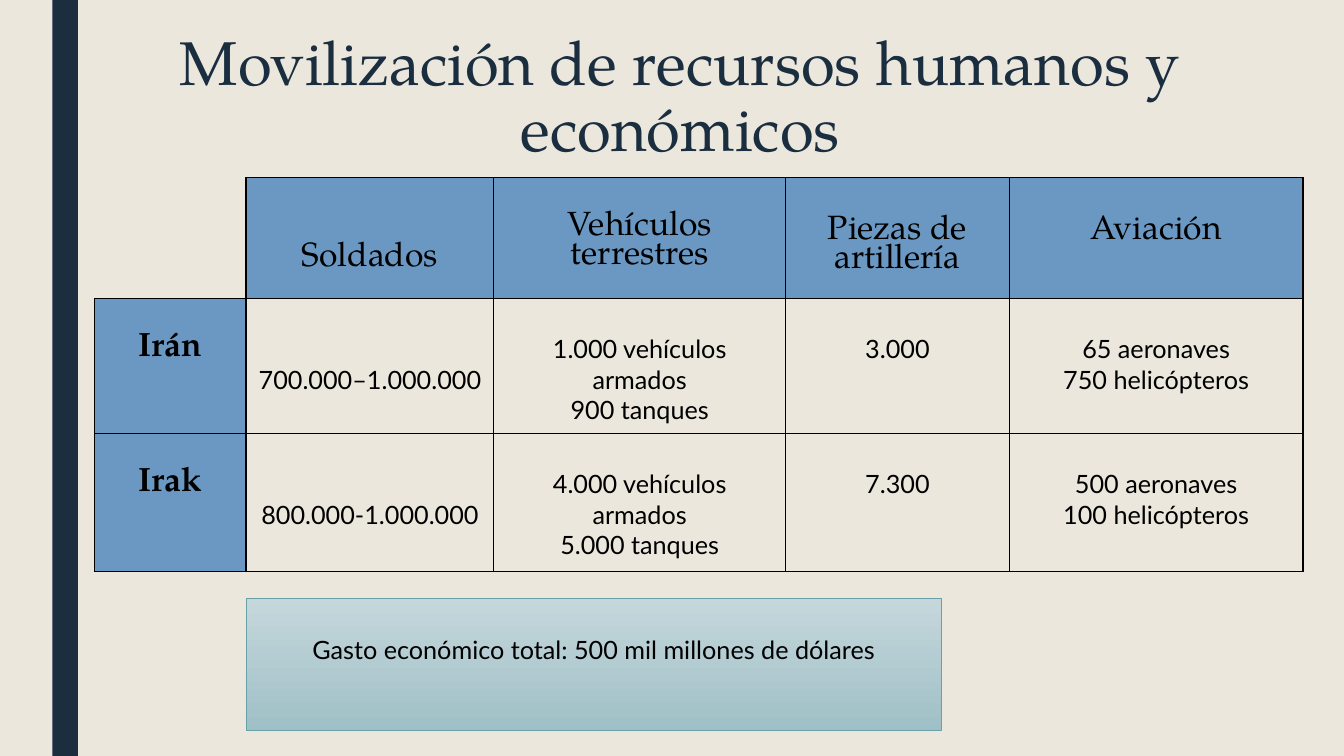
from lxml import etree
from pptx import Presentation
from pptx.dml.color import RGBColor
from pptx.enum.shapes import MSO_SHAPE
from pptx.enum.text import MSO_ANCHOR, PP_ALIGN
from pptx.oxml.ns import qn
from pptx.util import Inches, Pt

RECT = MSO_SHAPE.RECTANGLE
TOP = MSO_ANCHOR.TOP
CENTER = PP_ALIGN.CENTER
COLORS = {"bg": "EBE7DD", "navy": "1A2E40", "blue": "6A98C2", "black": "000000",
          "teal_light": "C5D7DB", "teal": "9FC0C7", "teal_line": "69A1AB"}
SERIF, SANS = "TeX Gyre Pagella", "Lato"
COLUMNS = [11.25, 18.45, 21.7, 16.65, 21.85]
ROWS = [16, 17.87, 18.27]
HEADERS = [("Soldados", 0.65), ("Vehículos terrestres", 0.35),
           ("Piezas de artillería", 0.39), ("Aviación", 0.39)]
COUNTRIES = {
    "Irán": [["700.000–1.000.000"], ["1.000 vehículos armados", "900 tanques"],
             ["3.000"], ["65 aeronaves", "750 helicópteros"]],
    "Irak": [["800.000-1.000.000"], ["4.000 vehículos armados", "5.000 tanques"],
             ["7.300"], ["500 aeronaves", "100 helicópteros"]],
}


class Deck:
    """Slide style and builders; positions are percentages of the slide."""

    def __init__(self):
        self.prs = Presentation()
        self.prs.slide_width, self.prs.slide_height = Inches(13.33), Inches(7.5)
        self.s = self.prs.slides.add_slide(self.prs.slide_layouts[6])
        self.paint(self.s.background.fill, "bg")

    def box(self, x, y, w, h):
        sw, sh = self.prs.slide_width, self.prs.slide_height
        return [int(v * full / 100) for v, full in ((x, sw), (y, sh), (w, sw), (h, sh))]

    def paint(self, fill, color):
        fill.solid()
        fill.fore_color.rgb = RGBColor.from_string(COLORS[color])

    def add_lines(self, tf, lines, size, font, color="black", bold=False, spacing=1.0):
        for i, line in enumerate(lines):
            p = tf.paragraphs[0] if i == 0 else tf.add_paragraph()
            p.alignment, p.line_spacing = CENTER, spacing
            r = p.add_run()
            r.text = line
            r.font.size, r.font.name, r.font.bold = Pt(size), font, bold
            r.font.color.rgb = RGBColor.from_string(COLORS[color])

    def text(self, pos, lines, *style, **more):
        tf = self.s.shapes.add_textbox(*self.box(*pos)).text_frame
        tf.word_wrap, tf.vertical_anchor = True, TOP
        self.add_lines(tf, lines, *style, **more)

    def rect(self, pos, color):
        sp = self.s.shapes.add_shape(RECT, *self.box(*pos))
        sp.shadow.inherit = False
        self.paint(sp.fill, color)
        sp.line.fill.background()
        return sp

    def panel(self, pos, lines):
        sp = self.rect(pos, "teal")
        sp.fill.gradient()
        sp.fill.gradient_angle = 270
        for i, (stop, color) in enumerate(zip(sp.fill.gradient_stops, ("teal_light", "teal"))):
            stop.position = i
            stop.color.rgb = RGBColor.from_string(COLORS[color])
        self.paint(sp.line.fill, "teal_line")
        sp.line.width = Pt(0.5)
        tf = sp.text_frame
        tf.word_wrap, tf.vertical_anchor, tf.margin_top = True, TOP, Inches(0.35)
        self.add_lines(tf, lines, 18, SANS)

    def borders(self, cell, sides):
        tc_pr = cell._tc.get_or_add_tcPr()
        for i, side in enumerate(("L", "R", "T", "B")):
            ln = etree.Element(qn(f"a:ln{side}"), w=str(Pt(1)))
            if side in sides:
                fill = etree.SubElement(ln, qn("a:solidFill"))
                etree.SubElement(fill, qn("a:srgbClr"), val=COLORS["black"])
            else:
                etree.SubElement(ln, qn("a:noFill"))
            tc_pr.insert(i, ln)

    def cell(self, cell, lines, top, size, font, fill=None, sides="LRTB", **more):
        cell.margin_top, cell.vertical_anchor = Inches(top), TOP
        if fill:
            self.paint(cell.fill, fill)
        else:
            cell.fill.background()
        self.borders(cell, sides)
        self.add_lines(cell.text_frame, lines, size, font, **more)

    def table(self, x, y):
        pos = self.box(x, y, sum(COLUMNS), sum(ROWS))
        table = self.s.shapes.add_table(len(ROWS), len(COLUMNS), *pos).table
        table.first_row = table.horz_banding = False
        for column, share in zip(table.columns, COLUMNS):
            column.width = self.box(0, 0, share, 0)[2]
        for row, share in zip(table.rows, ROWS):
            row.height = self.box(0, 0, 0, share)[3]
        self.cell(table.cell(0, 0), [], 0.05, 18, SANS, sides="RB")
        for c, (label, top) in enumerate(HEADERS, 1):
            self.cell(table.cell(0, c), [label], top, 24, SERIF, "blue", spacing=0.85)
        for r, (country, values) in enumerate(COUNTRIES.items(), 1):
            self.cell(table.cell(r, 0), [country], 0.35, 24, SERIF, "blue",
                      bold=True, spacing=0.85)
            for c, lines in enumerate(values, 1):
                self.cell(table.cell(r, c), lines, 0.65 if c == 1 else 0.35, 18, SANS)


def main():
    deck = Deck()
    deck.rect((3.9, 0, 1.9, 100), "navy")
    deck.text((11.25, 3.73, 78.75, 21.6), ["Movilización de recursos humanos y económicos"],
              44, SERIF, "navy", spacing=0.89)
    deck.table(7.05, 23.5)
    deck.panel((18.3, 79.2, 51.75, 17.47), ["Gasto económico total: 500 mil millones de dólares"])
    deck.prs.save("out.pptx")


if __name__ == "__main__":
    main()
